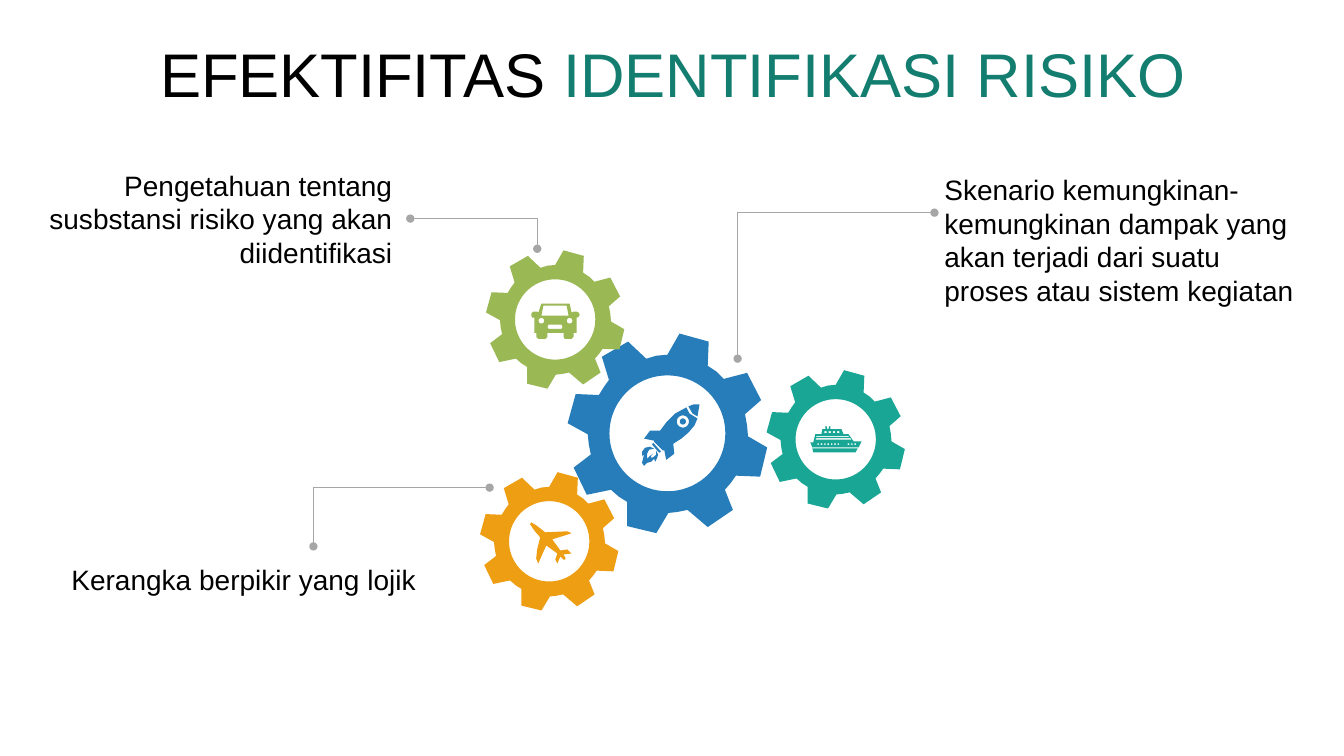
import math

import pptx
import pptx.dml.color
import pptx.enum.shapes
import pptx.enum.text
import pptx.oxml
import pptx.oxml.ns
import pptx.util
from pptx.util import Cm

ALIGN = pptx.enum.text.PP_ALIGN
ANCHOR = pptx.enum.text.MSO_ANCHOR
BLACK, DARK_TEAL, GREY = "000000", "137D70", "A6A6A6"
BLUE, TEAL, GREEN, ORANGE = "277DBA", "19A695", "9AB854", "EE9E13"
ICON_UNIT = 0.0254  # cm per unit of the icon outlines

# Gear outline around its centre; the teeth reach about 100 units out
GEAR_RIM = [
    (12, -99), (41, -91), (40, -67), (49, -61), (56, -54), (79, -60),
    (93, -33), (77, -19), (79, -8), (80, 3), (99, 14), (92, 43),
    (68, 42), (63, 49), (57, 56), (65, 76), (40, 93), (20, 76),
    (10, 78), (1, 79), (-11, 99), (-40, 92), (-40, 68), (-48, 63),
    (-56, 56), (-80, 61), (-93, 34), (-76, 21), (-78, 11), (-79, 1),
    (-99, -10), (-91, -39), (-68, -38), (-63, -46), (-58, -53),
    (-65, -76), (-39, -91), (-21, -74), (-11, -77), (0, -78),
]


def color(hex_string):
    return pptx.dml.color.RGBColor.from_string(hex_string)


def circle(x, y, radius, steps=72):
    angles = [2 * math.pi * step / steps for step in range(steps)]
    return [(x + radius * math.cos(a), y + radius * math.sin(a)) for a in angles]


def box(x, y, width, height):
    return [(x, y), (x + width, y), (x + width, y + height), (x, y + height)]


def car():
    body = [
        (10, 0), (38, 0), (40, 9), (42, 8), (45, 8), (47, 9), (48, 11),
        (47, 13), (45, 14), (45, 29), (42, 29), (42, 33), (40, 35),
        (33, 35), (32, 33), (32, 29), (16, 29), (16, 33), (14, 35),
        (7, 35), (5, 33), (5, 29), (3, 29), (3, 14), (1, 14), (0, 12),
        (0, 10), (2, 8), (6, 8), (7, 9),
    ]
    windscreen = [(12, 2), (10, 12), (37, 12), (35, 2)]
    grille = [(17, 21), (30, 21), (31, 23), (30, 25), (17, 25), (16, 23)]
    return [body, windscreen, grille, circle(10, 17, 2.8), circle(38, 17, 2.8)]


def ship():
    upper = [
        (19, 0), (20, 0), (20, 3), (31, 3), (33, 8), (38, 8), (43, 15),
        (51, 15), (48, 21), (2, 21), (0, 16), (3, 16), (5, 8), (11, 8),
        (12, 3), (15, 3), (15, 0), (16, 0), (17, 3), (18, 3),
    ]
    hull = [(2, 22), (47, 22), (45, 26), (3, 26)]
    decks = [[(6, 10), (5.5, 11), (39, 11), (38, 10)],
             [(6, 12), (5, 13.5), (41, 13.5), (40, 12)]]
    portholes = [box(7 + 3.35 * i, 17, 1.6, 1.6) for i in (*range(7), 9, 10, 11)]
    cabins = [box(14 + 4.2 * i, 5, 2.3, 2) for i in range(5)][:4]
    return [upper, hull, *decks, *portholes, *cabins]


def plane():
    return [[
        (41, 31), (33, 32), (35, 35), (35, 37), (33, 37), (30, 34),
        (27, 41), (25, 37), (27, 31), (16, 23), (8, 41), (6, 36),
        (7, 27), (10, 15), (4, 8), (0, 2), (1, 0), (6, 3), (15, 10),
        (37, 9), (41, 11), (22, 17), (30, 28), (37, 27),
    ]]


def rocket():
    flame = [
        (14, 44), (9, 45), (7, 49), (7, 54), (10, 51), (13, 49),
        (11, 51), (11, 53), (13, 52.5), (16, 50), (16, 46), (18, 50),
        (17, 53), (15, 57), (14, 54), (11, 57), (7, 58), (4, 61),
        (2, 58), (3, 54), (4, 50), (2, 51), (2, 53), (2, 47), (5, 43),
        (10, 42),
    ]
    body = [
        (46, 3), (49, 9), (57, 14), (54, 21), (48, 28), (41, 34),
        (33, 39), (34, 49), (26, 55), (24, 45), (23, 46), (14, 37),
        (14, 36), (4, 34), (10, 26), (20, 26), (26, 18), (35, 9),
    ]
    nozzle = [(13, 38), (21, 47), (19, 48), (12, 40)]
    nose = [(59, 0), (57, 12), (52, 9), (48, 2), (53, 0)]
    return [flame, body, nozzle, nose, circle(42.5, 17, 6), circle(42.5, 17, 3)]


def add_outline(slide, contours, left, top, unit, fill):
    """Draw closed contours as one shape; inner contours become holes."""
    placed = [[(Cm(left + x * unit), Cm(top + y * unit)) for x, y in contour]
              for contour in contours]
    builder = slide.shapes.build_freeform(*placed[0][0])
    for number, points in enumerate(placed):
        if number:
            builder.move_to(*points[0])
        builder.add_line_segments(points[1:], close=True)
    outline = builder.convert_to_shape()
    outline.shadow.inherit = False
    outline.fill.solid()
    outline.fill.fore_color.rgb = color(fill)
    outline.line.fill.background()


def add_gear(slide, x, y, radius, fill):
    add_outline(slide, [GEAR_RIM, circle(0, 0, 57.5)], x, y, radius / 100, fill)


def add_leader(slide, start, end, bend):
    """Draw an elbow line with round ends; bend is 0 at start, 100000 at end."""
    leader = slide.shapes.add_connector(
        pptx.enum.shapes.MSO_CONNECTOR.ELBOW, *map(Cm, start + end))
    leader.line.color.rgb = color(GREY)
    leader.line.width = pptx.util.Pt(0.5)
    properties = leader._element.spPr
    qn, element = pptx.oxml.ns.qn, pptx.oxml.xmlchemy.OxmlElement
    guides = properties.find(qn("a:prstGeom")).get_or_add_avLst()
    guide = element("a:gd")
    guide.set("name", "adj1")
    guide.set("fmla", f"val {bend}")
    guides.append(guide)
    for tag in ("a:headEnd", "a:tailEnd"):
        dot = element(tag)
        dot.set("type", "oval")
        properties.find(qn("a:ln")).append(dot)
    properties.append(element("a:effectLst"))


def add_text(slide, bounds, runs, size, align=ALIGN.LEFT, anchor=ANCHOR.TOP, wrap=True):
    frame = slide.shapes.add_textbox(*map(Cm, bounds)).text_frame
    frame.word_wrap = wrap
    frame.vertical_anchor = anchor
    paragraph = frame.paragraphs[0]
    paragraph.alignment = align
    paragraph.font.name = "Arial"
    paragraph.font.size = pptx.util.Pt(size)
    for words, shade in runs:
        run = paragraph.add_run()
        run.text = words
        run.font.color.rgb = color(shade)
    return paragraph


def main():
    deck = pptx.Presentation()
    deck.slide_width, deck.slide_height = Cm(33.87), Cm(19.05)
    slide = deck.slides.add_slide(deck.slide_layouts[6])

    # Title
    title = add_text(slide, (0.89, 0.94, 32.16, 2.01),
                     [("EFEKTIFITAS ", BLACK), ("IDENTIFIKASI RISIKO", DARK_TEAL)],
                     44, ALIGN.CENTER, ANCHOR.MIDDLE)
    title.line_spacing = 0.9
    title.space_before = pptx.util.Pt(10)

    # Leader lines from the gears to their texts
    add_leader(slide, (18.59, 9.04), (23.55, 5.36), 0)
    add_leader(slide, (7.9, 13.77), (12.34, 12.29), 0)
    add_leader(slide, (10.34, 5.51), (13.54, 6.27), 100000)

    # Gears
    for x, y, radius, fill in [(16.82, 10.92, 2.54, BLUE), (21.06, 11.07, 1.76, TEAL),
                               (13.99, 8.05, 1.76, GREEN), (13.84, 13.64, 1.76, ORANGE)]:
        add_gear(slide, x, y, radius, fill)

    # Icons inside the gears
    for icon, left, top, fill in [(car, 13.39, 7.65, GREEN), (ship, 20.42, 10.74, TEAL),
                                  (plane, 13.36, 13.16, ORANGE), (rocket, 16.13, 10.19, BLUE)]:
        add_outline(slide, icon(), left, top, ICON_UNIT, fill)

    # Texts around the gears
    add_text(slide, (0.51, 4.11, 9.63, 2.82),
             [("Pengetahuan tentang susbstansi risiko yang akan diidentifikasi", BLACK)],
             20, ALIGN.RIGHT)
    add_text(slide, (23.55, 4.22, 9.5, 3.68),
             [("Skenario kemungkinan-kemungkinan dampak yang akan terjadi "
               "dari suatu proses atau sistem kegiatan", BLACK)], 20)
    add_text(slide, (1.55, 14.05, 9.27, 1.12),
             [("Kerangka berpikir yang lojik", BLACK)], 20, wrap=False)

    deck.save("out.pptx")


if __name__ == "__main__":
    main()
